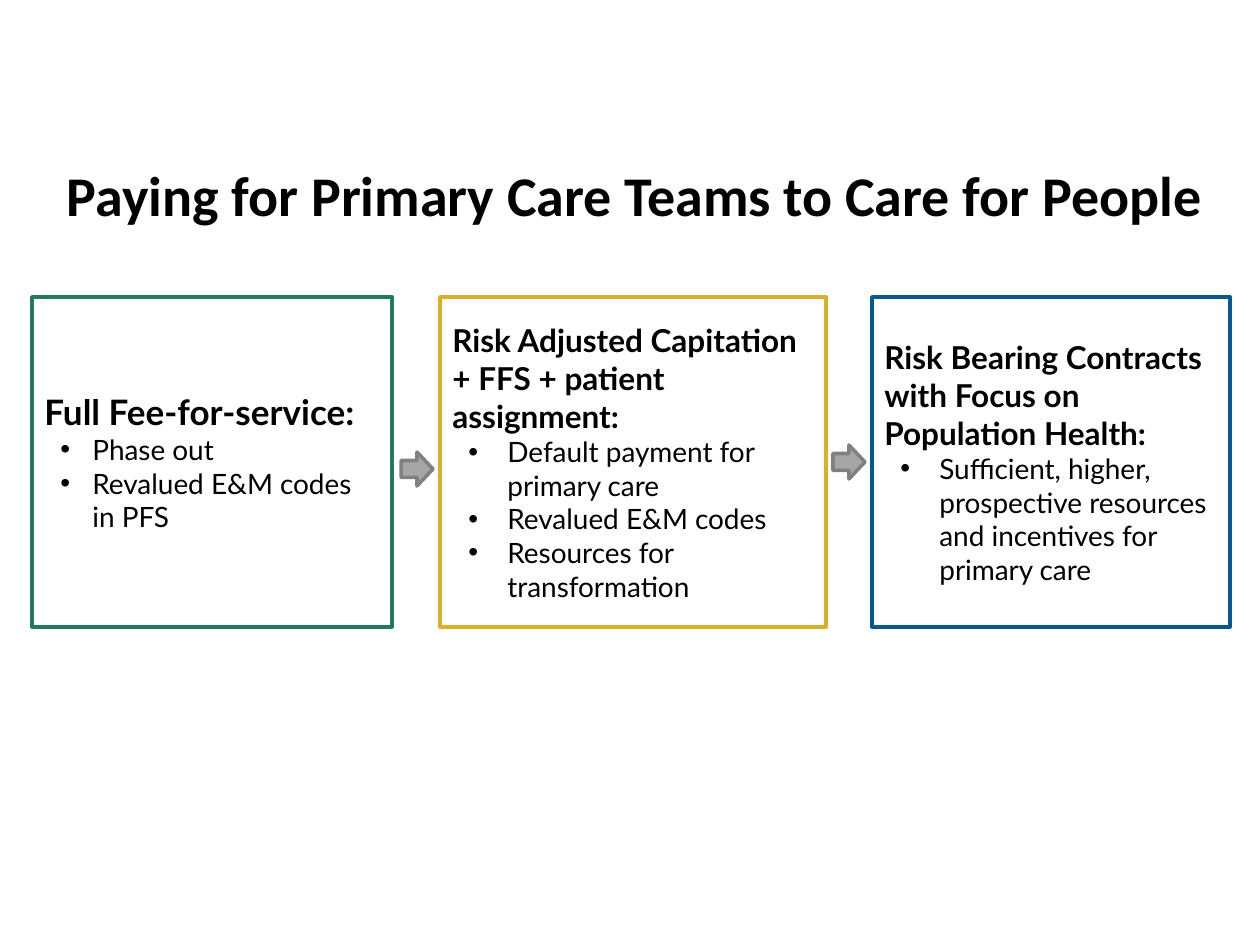
from dataclasses import dataclass

from lxml import etree
from pptx import Presentation
from pptx import util as u
from pptx.dml.color import RGBColor
from pptx.enum import shapes, text
from pptx.oxml.ns import qn

PX_PER_INCH = 126
TITLE_ONLY = 5


@dataclass(frozen=True)
class Theme:
    ink: str = "000000"
    paper: str = "FFFFFF"
    green: str = "207B5B"
    gold: str = "DDAE27"
    blue: str = "065892"
    arrow_fill: str = "A6A6A6"
    arrow_line: str = "808080"
    title_font: str = "Calibri"
    body_font: str = "Lato"
    title_size: int = 32
    bullet_size: int = 16
    line_width: int = 2


THEME = Theme()

PANEL_TOP, PANEL_HEIGHT = 297, 330
# left, width, colour, heading size, bullet indent, heading, bullets
STAGES = [
    (32, 360, THEME.green, 20, 32, "Full Fee-for-service:",
     ["Phase out", "Revalued E&M codes in PFS"]),
    (440, 386, THEME.gold, 18, 39,
     "Risk Adjusted Capitation + FFS + patient assignment:",
     ["Default payment for primary care", "Revalued E&M codes",
      "Resources for transformation"]),
    (872, 358, THEME.blue, 18, 39,
     "Risk Bearing Contracts with Focus on Population Health:",
     ["Sufficient, higher, prospective resources and incentives for primary care"]),
]
BULLET_START = 16
ARROWS = [(401, 452), (833, 445)]
ARROW_SIZE = (32, 34)


def px(length):
    return u.Emu(round(length * 914400 / PX_PER_INCH))


def style_font(paragraph, font, size, bold):
    paragraph.font.name = font
    paragraph.font.size = u.Pt(size)
    paragraph.font.bold = bold
    paragraph.font.color.rgb = RGBColor.from_string(THEME.ink)


def add_bullet(paragraph, indent):
    """Hang the paragraph by indent px behind a round bullet."""
    properties = paragraph._p.get_or_add_pPr()
    properties.set("marL", str(px(BULLET_START + indent)))
    properties.set("indent", str(-px(indent)))
    etree.SubElement(properties, qn("a:buFont")).set("typeface", "Arial")
    etree.SubElement(properties, qn("a:buChar")).set("char", "•")


def add_outlined(slide, preset, left, top, width, height, fill, line):
    shape = slide.shapes.add_shape(preset, px(left), px(top), px(width), px(height))
    shape.shadow.inherit = False
    shape.fill.solid()
    shape.fill.fore_color.rgb = RGBColor.from_string(fill)
    shape.line.color.rgb = RGBColor.from_string(line)
    shape.line.width = u.Pt(THEME.line_width)
    return shape


def add_stage(slide, left, width, colour, heading_size, indent, heading, bullets):
    panel = add_outlined(slide, shapes.MSO_SHAPE.RECTANGLE, left, PANEL_TOP,
                         width, PANEL_HEIGHT, THEME.paper, colour)
    frame = panel.text_frame
    frame.word_wrap = True
    frame.vertical_anchor = text.MSO_ANCHOR.MIDDLE
    first = frame.paragraphs[0]
    first.text = heading
    first.alignment = text.PP_ALIGN.LEFT
    style_font(first, THEME.body_font, heading_size, True)
    for bullet in bullets:
        item = frame.add_paragraph()
        item.text = bullet
        item.alignment = text.PP_ALIGN.LEFT
        add_bullet(item, indent)
        style_font(item, THEME.body_font, THEME.bullet_size, False)


def set_title(slide, words):
    title = slide.shapes.title
    title.left, title.top, title.width, title.height = map(px, (10, 151, 1250, 86))
    frame = title.text_frame
    frame.text = words
    frame.word_wrap = True
    frame.auto_size = text.MSO_AUTO_SIZE.NONE
    frame.vertical_anchor = text.MSO_ANCHOR.MIDDLE
    heading = frame.paragraphs[0]
    heading.alignment = text.PP_ALIGN.CENTER
    style_font(heading, THEME.title_font, THEME.title_size, True)


def main():
    deck = Presentation()
    deck.slide_width, deck.slide_height = u.Inches(10), u.Inches(7.5)
    slide = deck.slides.add_slide(deck.slide_layouts[TITLE_ONLY])
    set_title(slide, "Paying for Primary Care Teams to Care for People")
    for stage in STAGES:
        add_stage(slide, *stage)
    for left, top in ARROWS:
        add_outlined(slide, shapes.MSO_SHAPE.RIGHT_ARROW, left, top, *ARROW_SIZE,
                     THEME.arrow_fill, THEME.arrow_line)
    deck.save("out.pptx")


if __name__ == "__main__":
    main()
